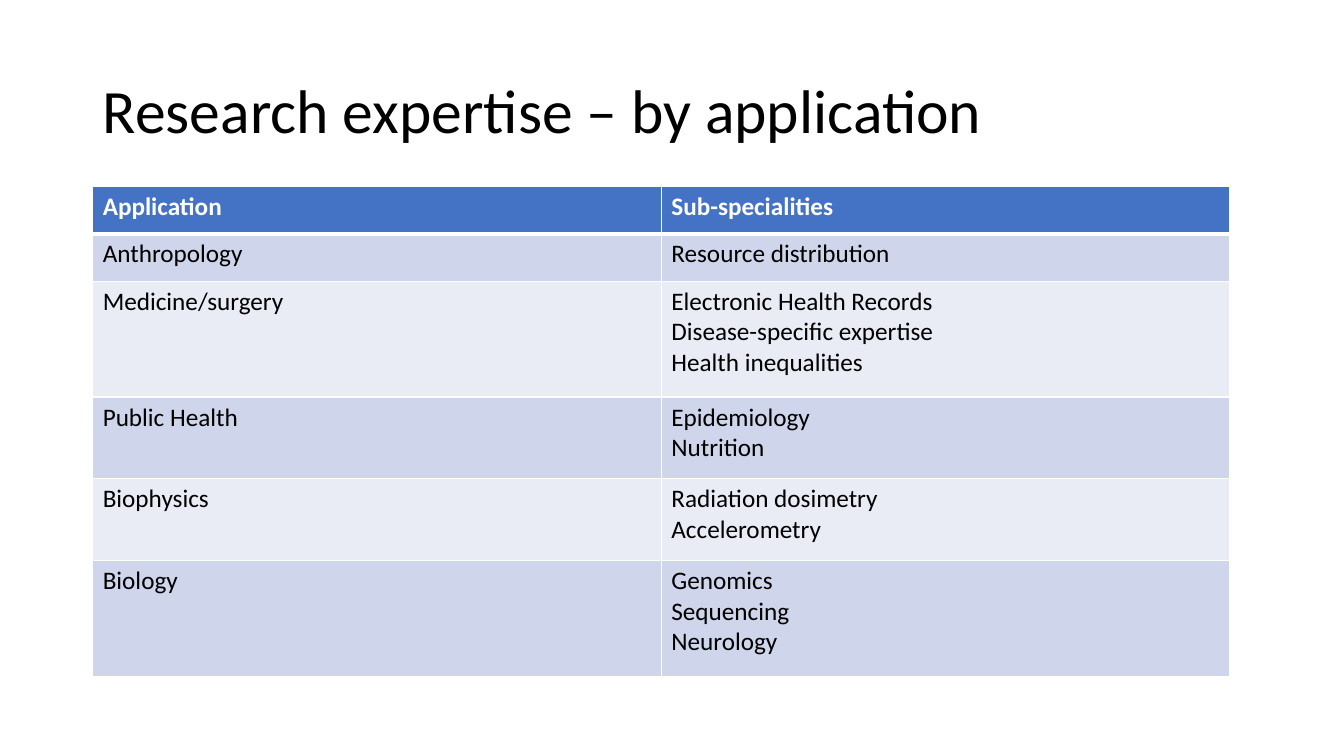
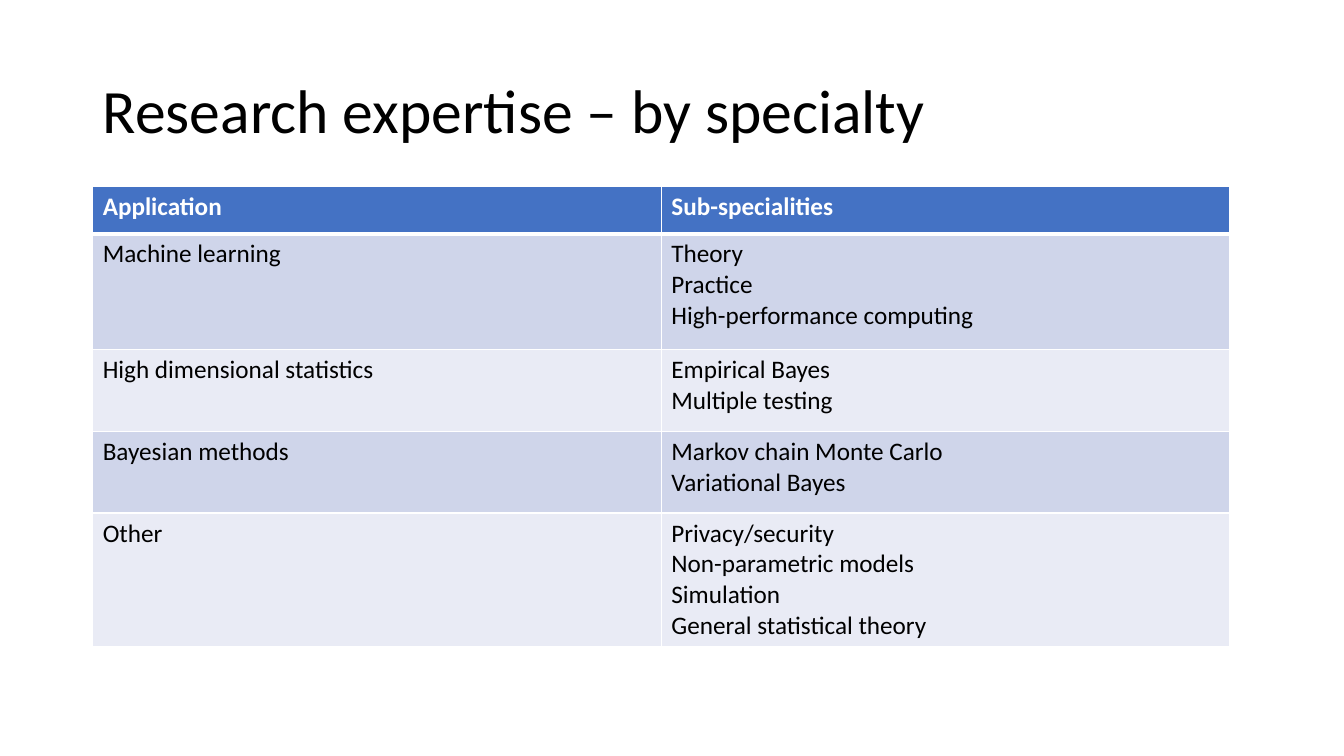
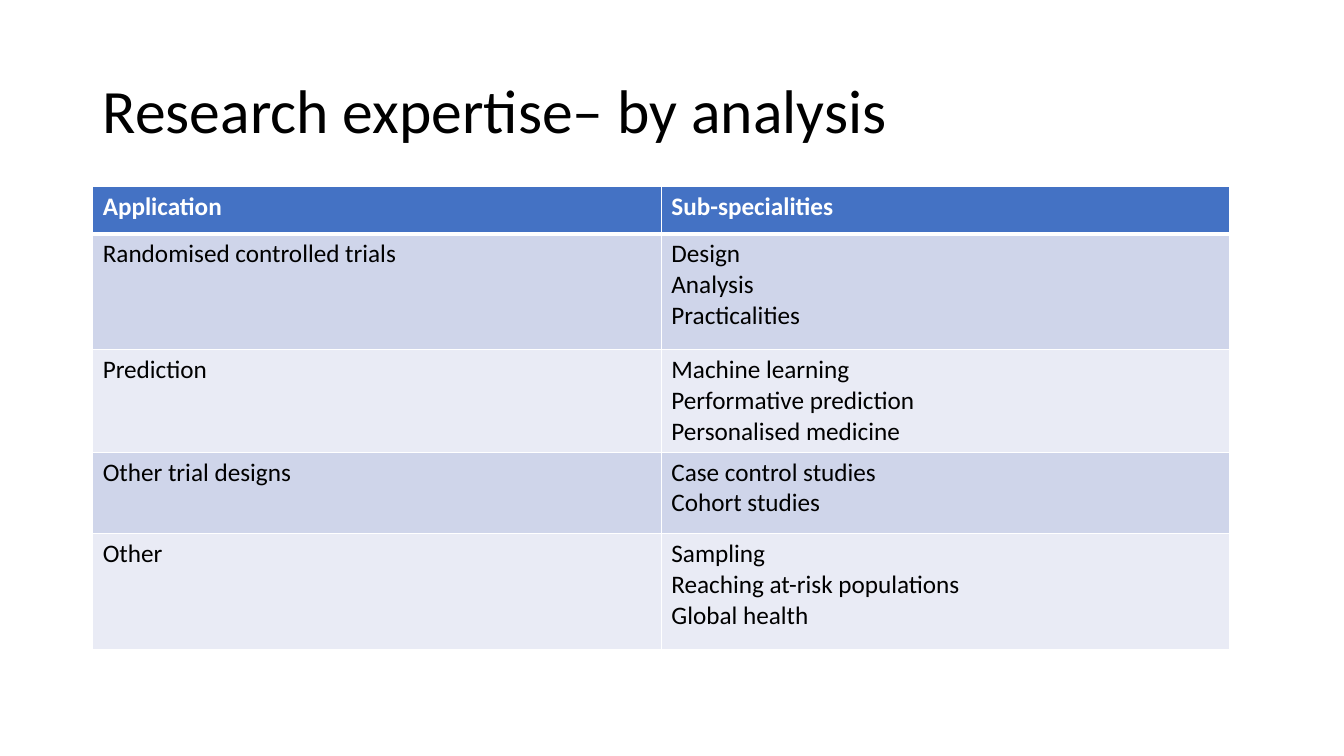
from lxml import etree
from pptx import Presentation
from pptx import util as u
from pptx.dml.color import RGBColor
from pptx.enum import text
from pptx.oxml import ns

# Shared style
FONT = "Calibri"
BLACK = RGBColor(0x00, 0x00, 0x00)
WHITE = RGBColor(0xFF, 0xFF, 0xFF)
HEADER_BLUE = RGBColor(0x44, 0x72, 0xC4)
BANDS = (RGBColor(0xCF, 0xD5, 0xEA), RGBColor(0xE9, 0xEB, 0xF5))
HEADINGS = ("Application", "Sub-specialities")

# Slide grid
WIDTH, HEIGHT = u.Inches(13.33), u.Inches(7.5)
COLUMNS, ROWS = 29, 150

# Title, then rows of (application, sub-specialities)
TABLES = {
    "Research expertise – by application": [
        ("Anthropology", ["Resource distribution"]),
        ("Medicine/surgery", ["Electronic Health Records",
                              "Disease-specific expertise",
                              "Health inequalities"]),
        ("Public Health", ["Epidemiology", "Nutrition"]),
        ("Biophysics", ["Radiation dosimetry", "Accelerometry"]),
        ("Biology", ["Genomics", "Sequencing", "Neurology"]),
    ],
    "Research expertise – by specialty": [
        ("Machine learning", ["Theory", "Practice",
                              "High-performance computing"]),
        ("High dimensional statistics", ["Empirical Bayes",
                                         "Multiple testing"]),
        ("Bayesian methods", ["Markov chain Monte Carlo",
                              "Variational Bayes"]),
        ("Other", ["Privacy/security", "Non-parametric models",
                   "Simulation", "General statistical theory"]),
    ],
    "Research expertise– by analysis": [
        ("Randomised controlled trials", ["Design", "Analysis",
                                          "Practicalities"]),
        ("Prediction", ["Machine learning", "Performative prediction",
                        "Personalised medicine"]),
        ("Other trial designs", ["Case control studies",
                                 "Cohort studies"]),
        ("Other", ["Sampling", "Reaching at-risk populations",
                   "Global health"]),
    ],
}
# Rows that fit closely around their text
TIGHT_ROWS = {"General statistical theory", "Personalised medicine"}


def across(columns):
    return round(WIDTH * columns / COLUMNS)


def down(rows):
    return round(HEIGHT * rows / ROWS)


def row_height(lines):
    if lines[-1] in TIGHT_ROWS:
        return down(2 + 6 * len(lines))
    return down(2.6 + 6.8 * len(lines))


class TableDeck:
    def __init__(self):
        self.deck = Presentation()
        self.deck.slide_width, self.deck.slide_height = WIDTH, HEIGHT
        self.slide = None

    def add_slide(self):
        self.slide = self.deck.slides.add_slide(self.deck.slide_layouts[5])

    def format_text(self, frame, size, color, bold=False):
        for para in frame.paragraphs:
            para.alignment = text.PP_ALIGN.LEFT
            for span in para.runs:
                span.font.name = FONT
                span.font.size = u.Pt(size)
                span.font.color.rgb = color
                span.font.bold = bold

    def title(self, words):
        box = self.slide.shapes.title
        box.left, box.top = across(2), down(8)
        box.width, box.height = across(25), down(29)
        frame = box.text_frame
        frame.text = words
        frame.auto_size = text.MSO_AUTO_SIZE.NONE
        frame.vertical_anchor = text.MSO_ANCHOR.MIDDLE
        frame.paragraphs[0].line_spacing = 0.9
        self.format_text(frame, 44, BLACK)

    def borders(self, cell, top, bottom):
        properties = cell._tc.get_or_add_tcPr()
        for side, points in (("L", 1), ("R", 1), ("T", top), ("B", bottom)):
            line = etree.SubElement(properties, ns.qn(f"a:ln{side}"),
                                    w=str(u.Pt(points)))
            fill = etree.SubElement(line, ns.qn("a:solidFill"))
            etree.SubElement(fill, ns.qn("a:srgbClr"), val=str(WHITE))

    def cell(self, cell, words, row):
        header = row == 0
        cell.text = words
        self.format_text(cell.text_frame, 18,
                         WHITE if header else BLACK, bold=header)
        # The thick line runs between the header and the first row
        self.borders(cell, top=3 if row == 1 else 1, bottom=3 if header else 1)
        cell.fill.solid()
        cell.fill.fore_color.rgb = HEADER_BLUE if header else BANDS[(row - 1) % 2]

    def table(self, entries):
        records = [(HEADINGS[0], [HEADINGS[1]])] + entries
        heights = [row_height(lines) for _, lines in records]
        table = self.slide.shapes.add_table(
            len(records), len(HEADINGS), across(2), down(37),
            across(24.54), sum(heights)).table
        for row, (application, lines) in enumerate(records):
            table.rows[row].height = heights[row]
            for column, words in enumerate((application, "\n".join(lines))):
                self.cell(table.cell(row, column), words, row)


def main():
    builder = TableDeck()
    for heading, entries in TABLES.items():
        builder.add_slide()
        builder.title(heading)
        builder.table(entries)
    builder.deck.save("out.pptx")


if __name__ == "__main__":
    main()
